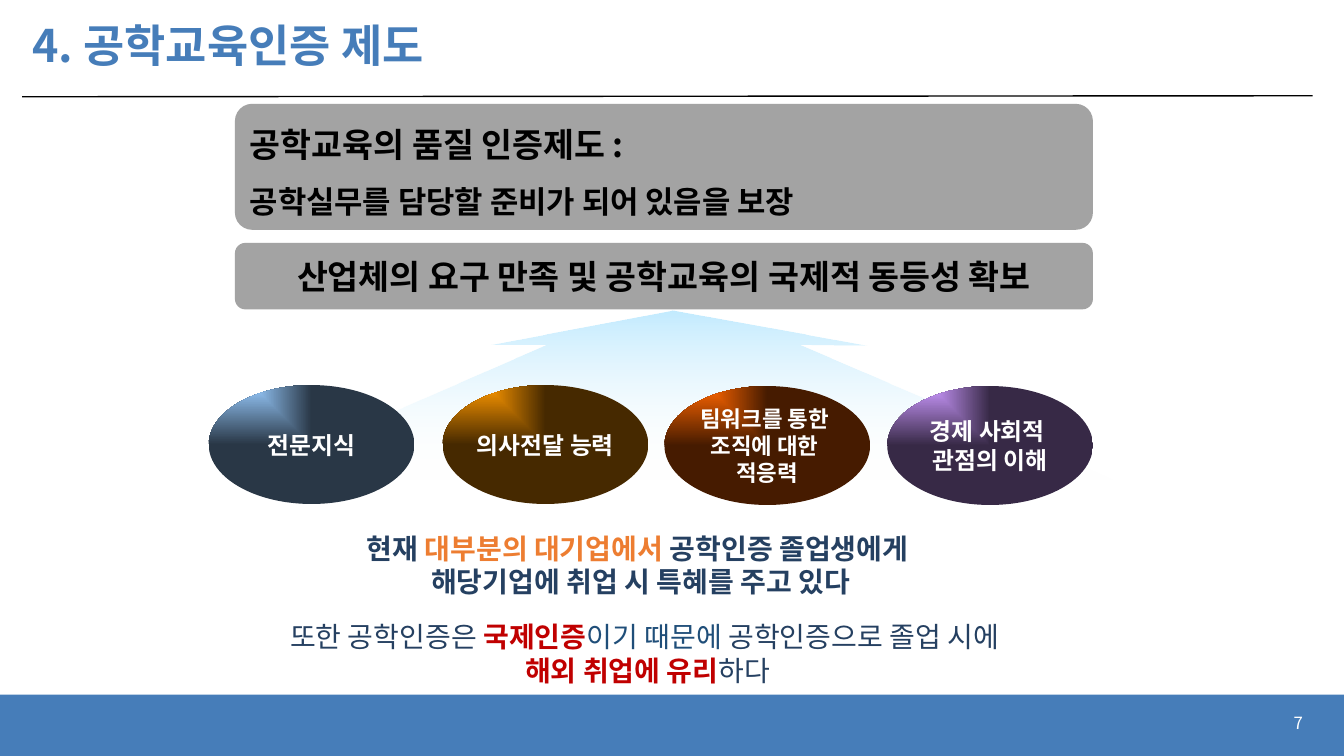
import pptx
import pptx.dml.color
import pptx.enum.shapes
import pptx.enum.text
import pptx.oxml
import pptx.oxml.ns
import pptx.util
from lxml import etree
from pptx.util import Inches

RGB = pptx.dml.color.RGBColor
SHAPE = pptx.enum.shapes.MSO_SHAPE
ALIGN = pptx.enum.text.PP_ALIGN
ANCHOR = pptx.enum.text.MSO_ANCHOR
qn = pptx.oxml.ns.qn

FONT = "Noto Sans CJK KR"
BLUE = RGB(0x46, 0x7D, 0xB9)
BLACK = RGB(0, 0, 0)
WHITE = RGB(0xFF, 0xFF, 0xFF)
GRAY = RGB(0x8C, 0x8C, 0x8C)
NAVY = RGB(0x25, 0x40, 0x61)
STEEL = RGB(0x1F, 0x4E, 0x79)
ORANGE = RGB(0xED, 0x7D, 0x31)
RED = RGB(0xC0, 0x00, 0x00)
SKY = RGB(0x66, 0xCC, 0xFF)
OVAL_BLUE = RGB(0x99, 0xCC, 0xFF)
OVAL_AMBER = RGB(0xFF, 0x99, 0x00)
OVAL_ORANGE = RGB(0xFF, 0x66, 0x00)
OVAL_VIOLET = RGB(0xCC, 0x99, 0xFF)


def add_run(p, text, size, color, bold=True, font=FONT):
    r = p.add_run()
    r.text = text
    r.font.size = pptx.util.Pt(size)
    r.font.bold = bold
    r.font.color.rgb = color
    r.font.name = font
    latin = r.font._element.find(qn("a:latin"))
    ea = etree.Element(qn("a:ea"), typeface=FONT)
    latin.addnext(ea)


def write(tf, lines, align=ALIGN.CENTER, anchor=ANCHOR.MIDDLE, spacing=None, wrap=True):
    """Each line is a list of add_run argument tuples."""
    tf.word_wrap = wrap
    tf.vertical_anchor = anchor
    for i, runs in enumerate(lines):
        p = tf.paragraphs[0] if i == 0 else tf.add_paragraph()
        p.alignment = align
        if spacing:
            p.line_spacing = spacing
        for run in runs:
            add_run(p, *run)


def add_textbox(s, box, lines, **options):
    sp = s.shapes.add_textbox(*map(Inches, box))
    write(sp.text_frame, lines, **options)


def add_plain_shape(s, kind, box, color):
    sp = s.shapes.add_shape(kind, *map(Inches, box))
    sp.shadow.inherit = False
    sp.fill.solid()
    sp.fill.fore_color.rgb = color
    sp.line.fill.background()
    return sp


def set_gradient(sp, start, end, direction):
    """Stops are (colour, modifier XML); direction is the lin or path XML."""
    stops = "".join(
        f'<a:gs pos="{pos}"><a:srgbClr val="{color}">{modifiers}</a:srgbClr></a:gs>'
        for pos, (color, modifiers) in ((0, start), (100000, end)))
    grad = pptx.oxml.parse_xml(
        f'<a:gradFill {pptx.oxml.ns.nsdecls("a")} rotWithShape="1">'
        f"<a:gsLst>{stops}</a:gsLst>{direction}</a:gradFill>")
    sp.fill.solid()
    solid = sp._element.spPr.find(qn("a:solidFill"))
    solid.getparent().replace(solid, grad)


def add_panel(s, box, radius, lines, **options):
    sp = add_plain_shape(s, SHAPE.ROUNDED_RECTANGLE, box, GRAY)
    sp.adjustments[0] = radius
    color = sp._element.spPr.find(qn("a:solidFill"))[0]
    etree.SubElement(color, qn("a:alpha"), val="80000")
    write(sp.text_frame, lines, wrap=False, **options)


def add_oval(s, left, top, color, size, lines):
    sp = add_plain_shape(s, SHAPE.OVAL, (left, top, 2.04, 1.18), color)
    set_gradient(sp, (color, ""),
                 (color, '<a:gamma/><a:shade val="27451"/><a:invGamma/>'),
                 '<a:path path="rect"><a:fillToRect r="100000" b="100000"/></a:path>')
    write(sp.text_frame, [[(text, size, WHITE)] for text in lines], wrap=False)


def add_arrow(s):
    points = [(6.67, 3.08), (4.87, 3.42), (5.42, 3.42), (2.33, 4.77),
              (11.07, 4.77), (7.93, 3.42), (8.6, 3.43)]
    points = [(Inches(x), Inches(y)) for x, y in points]
    builder = s.shapes.build_freeform(*points[0])
    builder.add_line_segments(points[1:], close=True)
    sp = builder.convert_to_shape()
    sp.shadow.inherit = False
    sp.line.fill.background()
    set_gradient(sp, (SKY, '<a:alpha val="40000"/>'), (WHITE, '<a:alpha val="0"/>'),
                 '<a:lin ang="5400000" scaled="1"/>')


def add_rule(s):
    line = s.shapes.add_connector(pptx.enum.shapes.MSO_CONNECTOR.STRAIGHT,
                                  *map(Inches, (0.22, 0.96, 13.02, 0.95)))
    line.line.color.rgb = BLACK
    line.line.width = pptx.util.Pt(1)
    etree.SubElement(line._element.spPr, qn("a:effectLst"))


def set_title(s, text):
    title = s.shapes.title
    title.left, title.top, title.width, title.height = map(Inches, (0.22, 0.1, 12.81, 0.75))
    write(title.text_frame, [[(text, 32, BLUE)]], align=ALIGN.LEFT, spacing=0.9)


def main():
    prs = pptx.Presentation()
    prs.slide_width, prs.slide_height = Inches(13.33), Inches(7.5)
    s = prs.slides.add_slide(prs.slide_layouts[5])

    add_plain_shape(s, SHAPE.RECTANGLE, (0, 6.89, 13.33, 0.61), BLUE)
    add_rule(s)
    set_title(s, "4. 공학교육인증 제도")
    add_textbox(s, (10.02, 6.97, 3, 0.4), [[("7", 12, WHITE, False)]], align=ALIGN.RIGHT)

    add_textbox(s, (2.21, 6.1, 8.43, 0.77), [
        [("또한 공학인증은 ", 20, NAVY, False, "Arial"),
         ("국제인증", 20, RED, True, "Arial"),
         ("이기 때문에 ", 20, STEEL, False, "Arial"),
         ("공학인증으로 졸업 시에 ", 20, NAVY, False, "Arial")],
        [("해외 취업에 유리", 20, RED, True, "Arial"),
         ("하다", 20, NAVY, False, "Arial")],
    ], anchor=ANCHOR.TOP)

    add_arrow(s)
    add_panel(s, (2.33, 2.41, 8.51, 0.66), 0.157,
              [[("산업체의 요구 만족 및 공학교육의 국제적 동등성 확보", 24, BLACK)]])
    for oval in (
        (2.07, 3.82, OVAL_BLUE, 17, ["전문지식"]),
        (4.39, 3.82, OVAL_AMBER, 17, ["의사전달 능력"]),
        (6.59, 3.83, OVAL_ORANGE, 16, ["팀워크를 통한 ", "조직에 대한 ", "적응력"]),
        (8.8, 3.83, OVAL_VIOLET, 17, ["경제 사회적 ", "관점의 이해"]),
    ):
        add_oval(s, *oval)
    add_panel(s, (2.33, 1.03, 8.51, 1.25), 0.137,
              [[("공학교육의 품질 인증제도 :", 24, BLACK)],
               [("공학실무를 담당할 준비가 되어 있음을 보장", 22, BLACK)]],
              align=ALIGN.LEFT, anchor=ANCHOR.BOTTOM, spacing=1.5)

    add_textbox(s, (1.98, 5.22, 8.75, 0.77), [
        [("현재 ", 20, NAVY), ("대부분의 대기업에서", 20, ORANGE),
         (" 공학인증 졸업생에게 ", 20, NAVY)],
        [("해당기업에 취업 시 특혜를 주고 있다", 20, NAVY)],
    ], anchor=ANCHOR.TOP)
    prs.save("out.pptx")


if __name__ == "__main__":
    main()
